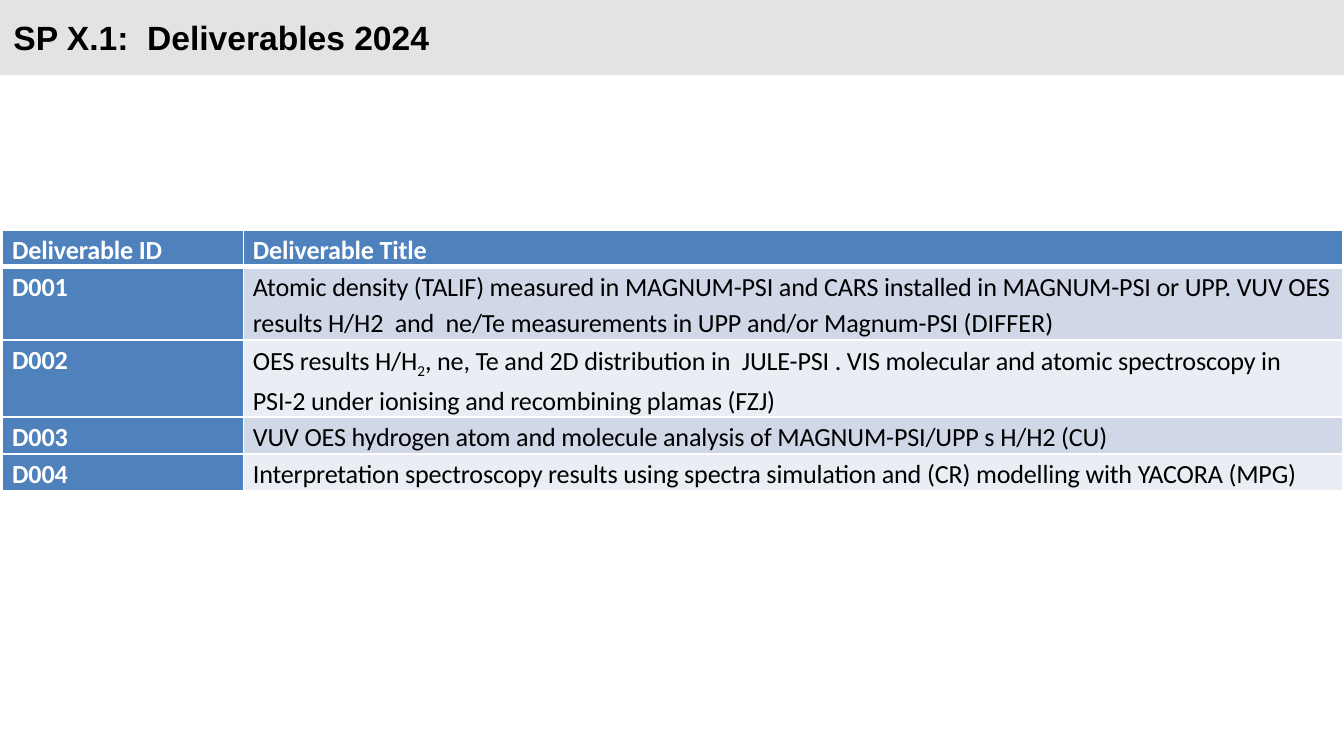
from lxml import etree
from pptx import Presentation
from pptx.dml.color import RGBColor
from pptx.enum.shapes import MSO_SHAPE
from pptx.enum.text import MSO_ANCHOR, PP_ALIGN
from pptx.oxml.ns import qn
from pptx.util import Cm, Pt

RECTANGLE = MSO_SHAPE.RECTANGLE
MIDDLE = MSO_ANCHOR.MIDDLE
LEFT = PP_ALIGN.LEFT

COLORS = {
    "band": "E3E3E3",
    "black": "000000",
    "white": "FFFFFF",
    "blue": "4F81BD",
    "odd": "D0D8E8",
    "even": "E9EDF4",
}
SUBSCRIPT = "-25000"
TIGHT = "-10"
THIN, THICK = 1, 3

HEADER = ("Deliverable ID", [("Deliverable Title", {})])
DELIVERABLES = [
    ("D001", [
        ("Atomic density (TALIF) measured in MAGNUM-PSI and CARS installed in "
         "MAGNUM-PSI or UPP. VUV OES results H/H2  and  ne/Te measurements in "
         "UPP and/or Magnum-PSI ", {}),
        ("(DIFFER)", {"spc": "0"}),
    ]),
    ("D002", [
        ("OES results H/H", {}),
        ("2", {"baseline": SUBSCRIPT}),
        (", ne, Te and 2D distribution in  JULE-PSI . VIS molecular and atomic "
         "spectroscopy in PSI-2 under ionising and recombining plamas (FZJ)", {}),
    ]),
    ("D003", [("VUV OES hydrogen atom and molecule analysis of "
               "MAGNUM-PSI/UPP s H/H2 (CU)", {})]),
    ("D004", [("Interpretation spectroscopy results using spectra simulation and "
               "(CR) modelling with YACORA (MPG)", {})]),
]
COLUMN_WIDTHS = [4.55, 20.77]
ROW_HEIGHTS = [0.68, 1.38, 1.46, 0.68, 0.68]


def color(name):
    return RGBColor.from_string(COLORS[name])


def add_title(page, left, top, width, height):
    band = page.shapes.add_shape(RECTANGLE, 0, 0, Cm(25.4), Cm(1.42))
    band.shadow.inherit = False
    band.fill.solid()
    band.fill.fore_color.rgb = color("band")
    band.line.fill.background()

    title = page.shapes.title
    title._element.addprevious(band._element)
    title.left, title.top = Cm(left), Cm(top)
    title.width, title.height = Cm(width), Cm(height)
    frame = title.text_frame
    frame.text = "SP X.1:  Deliverables 2024"
    frame.vertical_anchor = MIDDLE
    para = frame.paragraphs[0]
    para.alignment = LEFT
    para.font.name = "Arial"
    para.font.size = Pt(18)
    para.font.bold = True
    para.font.color.rgb = color("black")


def set_borders(cell, bottom):
    properties = cell._tc.get_or_add_tcPr()
    widths = {"lnL": THIN, "lnR": THIN, "lnT": THIN, "lnB": bottom}
    for position, (side, width) in enumerate(widths.items()):
        line = etree.Element(qn(f"a:{side}"), w=str(Pt(width)))
        fill = etree.SubElement(line, qn("a:solidFill"))
        etree.SubElement(fill, qn("a:srgbClr"), val=COLORS["white"])
        properties.insert(position, line)


def fill_cell(cell, spans, background, ink, bold, bottom):
    cell.margin_left = cell.margin_right = Cm(0.18)
    cell.margin_top = cell.margin_bottom = 0
    cell.fill.solid()
    cell.fill.fore_color.rgb = color(background)
    set_borders(cell, bottom)
    para = cell.text_frame.paragraphs[0]
    para.line_spacing = 1.15
    para.font.name = "Calibri"
    para.font.size = Pt(14)
    para.font.bold = bold
    para.font.color.rgb = color(ink)
    for text, attributes in spans:
        span = para.add_run()
        span.text = text
        properties = span._r.get_or_add_rPr()
        for key, value in {"spc": TIGHT, **attributes}.items():
            properties.set(key, value)


def add_deliverables(page, left, top, width, height):
    entries = [HEADER, *DELIVERABLES]
    table = page.shapes.add_table(
        len(entries), len(COLUMN_WIDTHS), Cm(left), Cm(top), Cm(width), Cm(height)
    ).table
    for column, column_width in zip(table.columns, COLUMN_WIDTHS):
        column.width = Cm(column_width)
    for index, (code, title) in enumerate(entries):
        table.rows[index].height = Cm(ROW_HEIGHTS[index])
        is_header = index == 0
        bottom = THICK if is_header else THIN
        fill_cell(table.cell(index, 0), [(code, {})], "blue", "white", True, bottom)
        if is_header:
            background, ink = "blue", "white"
        else:
            background, ink = ("odd" if index % 2 else "even"), "black"
        fill_cell(table.cell(index, 1), title, background, ink, is_header, bottom)


def main():
    deck = Presentation()
    deck.slide_width, deck.slide_height = Cm(25.4), Cm(14.29)
    page = deck.slides.add_slide(deck.slide_layouts.get_by_name("Title Only"))
    add_title(page, 0, -0.2, 25.58, 1.8)
    add_deliverables(page, 0.05, 4.35, sum(COLUMN_WIDTHS), sum(ROW_HEIGHTS))
    deck.save("out.pptx")


if __name__ == "__main__":
    main()
